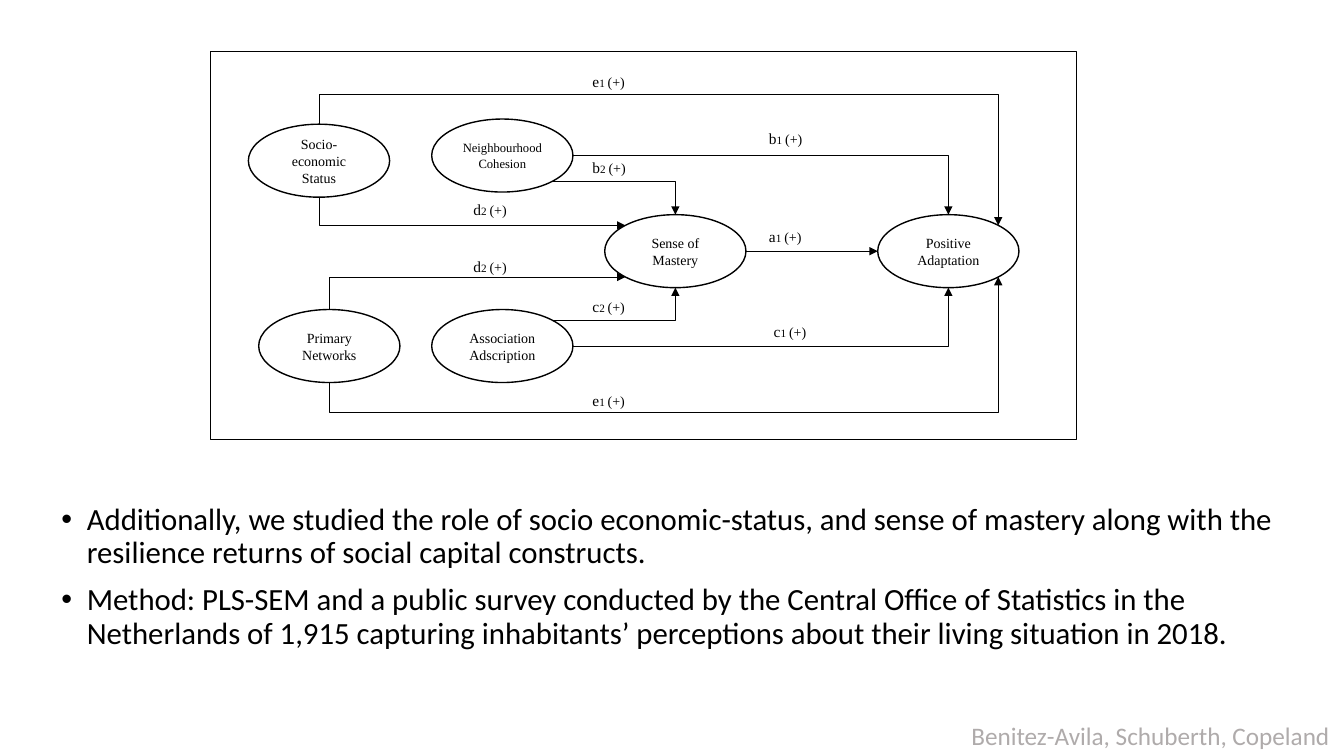
from lxml import etree
from pptx import Presentation, util as u
from pptx.dml.color import RGBColor
from pptx.enum import shapes, text
from pptx.oxml.ns import qn

BLACK = RGBColor(0x00, 0x00, 0x00)
WHITE = RGBColor(0xFF, 0xFF, 0xFF)
GREY = RGBColor(0xAF, 0xAB, 0xAB)
SERIF, SANS = "Times New Roman", "Calibri"
NODE_W, NODE_H = 3.56, 1.84
DIAGONAL = 0.707


def write(paragraph, words, size=10, font=SERIF, color=BLACK):
    run = paragraph.add_run()
    run.text = words
    run.font.size = u.Pt(size)
    run.font.name = font
    run.font.color.rgb = color


class PathModel:
    def __init__(self, slide):
        self.slide = slide
        self.centres = {}

    def frame(self, left, top, width, height, kind=shapes.MSO_SHAPE.RECTANGLE):
        shape = self.slide.shapes.add_shape(
            kind, u.Cm(left), u.Cm(top), u.Cm(width), u.Cm(height))
        shape.shadow.inherit = False
        shape.fill.background()
        shape.line.color.rgb = BLACK
        shape.line.width = u.Pt(1)
        return shape

    def construct(self, key, lines, x, y, size=10):
        oval = self.frame(x - NODE_W / 2, y - NODE_H / 2, NODE_W, NODE_H,
                          shapes.MSO_SHAPE.OVAL)
        oval.fill.solid()
        oval.fill.fore_color.rgb = WHITE
        body = oval.text_frame
        body.word_wrap = True
        body.vertical_anchor = text.MSO_ANCHOR.MIDDLE
        body.margin_left = body.margin_right = u.Cm(0.23)
        for index, line in enumerate(lines):
            paragraph = body.add_paragraph() if index else body.paragraphs[0]
            paragraph.alignment = text.PP_ALIGN.CENTER
            write(paragraph, line, size)
        self.centres[key] = x, y

    def site(self, key, across, down):
        x, y = self.centres[key]
        reach = DIAGONAL if across and down else 1
        return x + across * reach * NODE_W / 2, y + down * reach * NODE_H / 2

    def connector(self, kind, start, end, arrow="tailEnd"):
        link = self.slide.shapes.add_connector(
            kind, *(u.Cm(value) for value in (*start, *end)))
        link.line.color.rgb = BLACK
        link.line.width = u.Pt(0.5)
        properties = link._element.spPr
        etree.SubElement(properties.find(qn("a:ln")), qn("a:" + arrow), type="triangle")
        etree.SubElement(properties, qn("a:effectLst"))
        return properties

    def straight(self, start, end):
        self.connector(shapes.MSO_CONNECTOR.STRAIGHT, start, end)

    def corner(self, start, end, arrow="tailEnd"):
        properties = self.connector(shapes.MSO_CONNECTOR.ELBOW, start, end, arrow)
        properties.find(qn("a:prstGeom")).set("prst", "bentConnector2")

    def detour(self, start, end, side, clearance=0.76):
        middle_x, middle_y = (start[0] + end[0]) / 2, (start[1] + end[1]) / 2
        half_run, half_rise = (end[0] - start[0]) / 2, abs(end[1] - start[1]) / 2
        properties = self.connector(
            shapes.MSO_CONNECTOR.ELBOW,
            (middle_x + half_rise, middle_y + side * half_run),
            (middle_x - half_rise, middle_y - side * half_run))
        properties.find(qn("a:xfrm")).set("rot", str((180 - side * 90) * 60000))
        guides = properties.find(qn("a:prstGeom")).find(qn("a:avLst"))
        bend = round(-clearance / (2 * half_rise) * 100000)
        etree.SubElement(guides, qn("a:gd"), name="adj1", fmla=f"val {bend}")

    def textbox(self, left, top, width, height, wrap=True):
        box = self.slide.shapes.add_textbox(
            u.Cm(left), u.Cm(top), u.Cm(width), u.Cm(height))
        box.text_frame.word_wrap = wrap
        return box.text_frame

    def coefficient(self, letter, number, left, top):
        paragraph = self.textbox(left, top, 2.67, 0.74).paragraphs[0]
        for words, size in ((letter, 11), (f"{number} ", 8), ("(+)", 10)):
            write(paragraph, words, size)

    def bullets(self, points, left, top, width, height):
        body = self.textbox(left, top, width, height)
        for index, point in enumerate(points):
            paragraph = body.add_paragraph() if index else body.paragraphs[0]
            paragraph.line_spacing = 0.9
            paragraph.space_before = u.Pt(10)
            properties = paragraph._p.get_or_add_pPr()
            properties.set("marL", str(u.Cm(0.64)))
            properties.set("indent", str(u.Cm(-0.64)))
            etree.SubElement(properties, qn("a:buFont"), typeface="Arial")
            etree.SubElement(properties, qn("a:buChar"), char="•")
            write(paragraph, point, 22, SANS)


def main():
    deck = Presentation()
    deck.slide_width, deck.slide_height = u.Cm(33.87), u.Cm(19.05)
    model = PathModel(deck.slides.add_slide(deck.slide_layouts[6]))
    site = model.site

    model.frame(5.31, 1.3, 21.82, 9.78)
    for construct in (
        ("mastery", ["Sense of Mastery"], 17.02, 6.33),
        ("adaptation", ["Positive Adaptation"], 23.9, 6.33),
        ("cohesion", ["Neighbourhood Cohesion"], 12.66, 3.92, 9),
        ("association", ["Association Adscription"], 12.66, 8.72),
        ("networks", ["Primary Networks"], 8.3, 8.72),
        ("status", ["Socio-economic", "Status"], 8.04, 4.05),
    ):
        model.construct(*construct)

    model.straight(site("mastery", 1, 0), site("adaptation", -1, 0))
    for capital, background, side in (("cohesion", "status", -1),
                                      ("association", "networks", 1)):
        model.corner(site(capital, 1, 0), site("adaptation", 0, side))
        model.corner(site(capital, 1, -side), site("mastery", 0, side))
        model.corner(site("mastery", -1, side), site(background, 0, -side), "headEnd")
        model.detour(site(background, 0, side), site("adaptation", 1, side), side)

    for coefficient in (
        ("a", 1, 19.13, 5.61), ("b", 1, 19.13, 3.12), ("c", 1, 19.25, 7.98),
        ("b", 2, 14.68, 3.86), ("c", 2, 14.68, 7.37),
        ("e", 1, 14.68, 1.7), ("e", 1, 14.68, 9.73),
        ("d", 2, 11.68, 4.93), ("d", 2, 11.68, 6.35),
    ):
        model.coefficient(*coefficient)

    model.bullets([
        "Additionally, we studied the role of socio economic-status, and sense of "
        "mastery along with the resilience returns of social capital constructs.",
        "Method: PLS-SEM and a public survey conducted by the Central Office of "
        "Statistics in the Netherlands of 1,915 capturing inhabitants’ perceptions "
        "about their living situation in 2018.",
    ], 1.3, 12.57, 31.32, 5.26)
    authors = model.textbox(24.23, 18.03, 9.65, 1.02, wrap=False)
    write(authors.paragraphs[0], "Benitez-Avila, Schuberth, Copeland", 18, SANS, GREY)
    deck.save("out.pptx")


if __name__ == "__main__":
    main()
